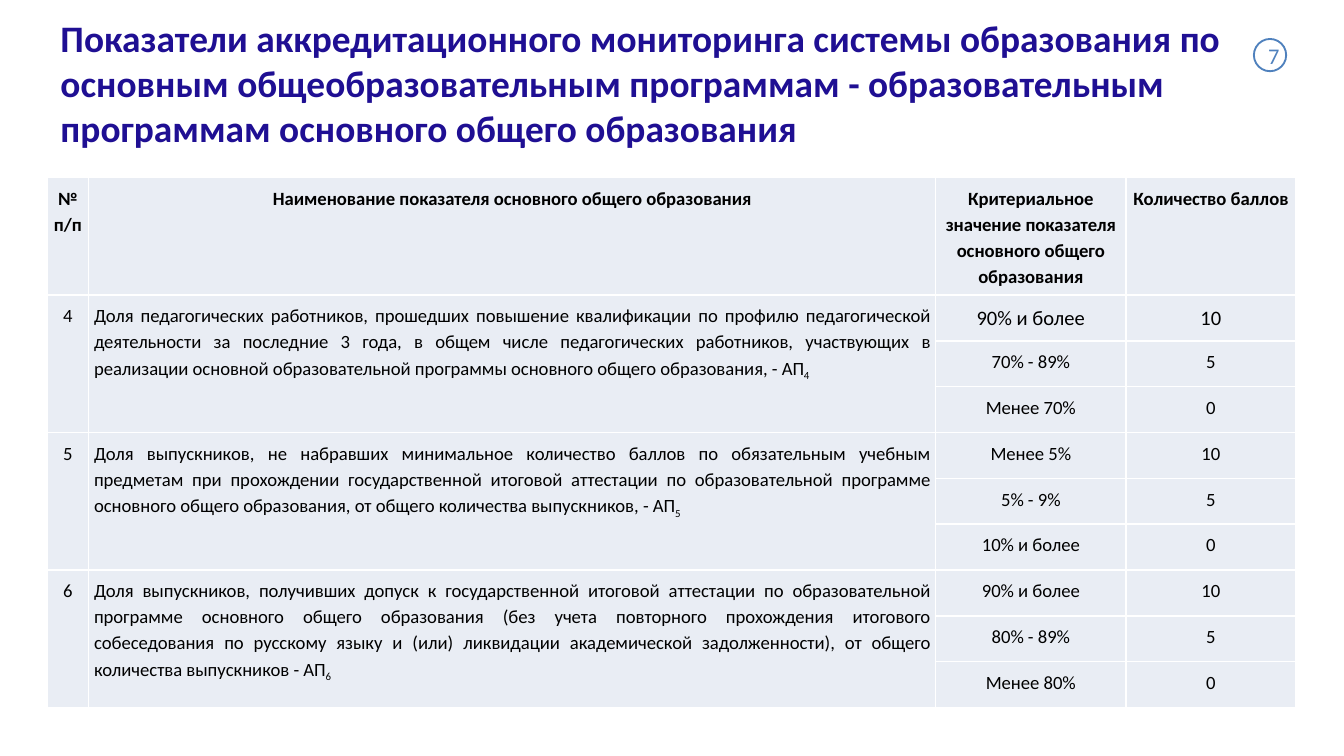
from lxml.etree import SubElement
from pptx import Presentation
from pptx.dml.color import RGBColor
from pptx.enum.shapes import MSO_SHAPE
from pptx.enum.text import MSO_ANCHOR, MSO_AUTO_SIZE, PP_ALIGN
from pptx.oxml.ns import qn
from pptx.util import Inches, Pt

COLORS = {"title": "1F0F93", "text": "000000", "cell": "E9EDF4", "accent": "4F81BD", "white": "FFFFFF"}
FONT = "Calibri"
COLUMNS = (0.31, 6.3, 1.42, 1.26)
HEADER_HEIGHT = 0.87
TITLE = (
    "Показатели аккредитационного мониторинга системы образования по основным "
    "общеобразовательным программам - образовательным программам основного общего образования"
)
HEADERS = (
    "№ п/п",
    "Наименование показателя основного общего образования",
    "Критериальное значение показателя основного общего образования",
    "Количество баллов",
)
SCORES = ("10", "5", "0")
INDICATORS = (
    ("4", "Доля педагогических работников, прошедших повышение квалификации по профилю "
          "педагогической деятельности за последние 3 года, в общем числе педагогических "
          "работников, участвующих в реализации основной образовательной программы основного "
          "общего образования, - АП",
     ("90% и более", "70% - 89%", "Менее 70%")),
    ("5", "Доля выпускников, не набравших минимальное количество баллов по обязательным учебным "
          "предметам при прохождении государственной итоговой аттестации по образовательной "
          "программе основного общего образования, от общего количества выпускников, - АП",
     ("Менее 5%", "5% - 9%", "10% и более")),
    ("6", "Доля выпускников, получивших допуск к государственной итоговой аттестации по "
          "образовательной программе основного общего образования (без учета повторного "
          "прохождения итогового собеседования по русскому языку и (или) ликвидации академической "
          "задолженности), от общего количества выпускников - АП",
     ("90% и более", "80% - 89%", "Менее 80%")),
)


def color(name):
    """Return the named palette colour."""
    return RGBColor.from_string(COLORS[name])


def format_runs(paragraph, size, color_name, bold=False):
    """Apply one font style to every run of a paragraph."""
    for run in paragraph.runs:
        run.font.name = FONT
        run.font.size = Pt(size)
        run.font.bold = bold
        run.font.color.rgb = color(color_name)


def style_cell(cell):
    """Give a cell its margins, white borders and fill."""
    cell.margin_left = cell.margin_right = Inches(0.04)
    cell.margin_top = cell.margin_bottom = Inches(0.05)
    properties = cell._tc.get_or_add_tcPr()
    for side in ("a:lnL", "a:lnR", "a:lnT", "a:lnB"):
        border = SubElement(properties, qn(side), w=str(Pt(1)))
        fill = SubElement(border, qn("a:solidFill"))
        SubElement(fill, qn("a:srgbClr"), val=COLORS["white"])
    cell.fill.solid()
    cell.fill.fore_color.rgb = color("cell")


def write_cell(cell, text, size=10, bold=False, alignment=PP_ALIGN.CENTER, subscript=""):
    """Write a cell's text with an optional closing subscript."""
    paragraph = cell.text_frame.paragraphs[0]
    paragraph.text = text
    paragraph.alignment = alignment
    paragraph.line_spacing = 1.15
    if subscript:
        run = paragraph.add_run()
        run.text = subscript
        run._r.get_or_add_rPr().set("baseline", "-25000")
    format_runs(paragraph, size, "text", bold)


def add_title(slide, left, top, width, height):
    """Place the slide title in its placeholder."""
    title = slide.shapes.title
    title.left, title.top, title.width, title.height = left, top, width, height
    frame = title.text_frame
    frame.text = TITLE
    frame.word_wrap = True
    frame.auto_size = MSO_AUTO_SIZE.NONE
    frame.vertical_anchor = MSO_ANCHOR.MIDDLE
    paragraph = frame.paragraphs[0]
    paragraph.alignment = PP_ALIGN.LEFT
    format_runs(paragraph, 20, "title", True)


def add_number_badge(slide, left, top, diameter):
    """Draw the ringed slide number."""
    badge = slide.shapes.add_shape(MSO_SHAPE.OVAL, left, top, diameter, diameter)
    badge.shadow.inherit = False
    badge.fill.solid()
    badge.fill.fore_color.rgb = color("white")
    badge.line.color.rgb = color("accent")
    badge.line.width = Pt(1)
    frame = badge.text_frame
    frame.text = "7"
    frame.vertical_anchor = MSO_ANCHOR.MIDDLE
    frame.paragraphs[0].alignment = PP_ALIGN.CENTER
    format_runs(frame.paragraphs[0], 12, "accent")


def add_indicator_table(slide, left, top, width, height):
    """Build the table with one block of score rows per indicator."""
    block = len(SCORES)
    row_count = 1 + block * len(INDICATORS)
    table = slide.shapes.add_table(row_count, len(COLUMNS), left, top, width, height).table
    for column, share in zip(table.columns, COLUMNS):
        column.width = int(width * share / sum(COLUMNS))
    header_height = Inches(HEADER_HEIGHT)
    for index, row in enumerate(table.rows):
        row.height = int((height - header_height) / (row_count - 1)) if index else header_height
    for cell in table.iter_cells():
        style_cell(cell)
    for index, header in enumerate(HEADERS):
        write_cell(table.cell(0, index), header, bold=True)
    for index, (number, name, criteria) in enumerate(INDICATORS):
        first = 1 + index * block
        for column in (0, 1):
            table.cell(first, column).merge(table.cell(first + block - 1, column))
        write_cell(table.cell(first, 0), number)
        write_cell(table.cell(first, 1), name, alignment=PP_ALIGN.JUSTIFY, subscript=number)
        for row, values in enumerate(zip(criteria, SCORES), first):
            for column, value in enumerate(values, 2):
                write_cell(table.cell(row, column), value, size=11 if row == 1 else 10)


def main():
    """Create and save the presentation."""
    presentation = Presentation()
    presentation.slide_width = Inches(10)
    presentation.slide_height = presentation.slide_width * 9 // 16
    slide = presentation.slides.add_slide(presentation.slide_layouts[5])
    left, top = Inches(0.35), Inches(0.29)
    add_indicator_table(slide, left, Inches(1.32), Inches(sum(COLUMNS)), Inches(3.94))
    add_title(slide, left, top, Inches(9), Inches(0.65))
    add_number_badge(slide, Inches(9.33), top, Inches(0.24))
    presentation.save("out.pptx")


if __name__ == "__main__":
    main()
